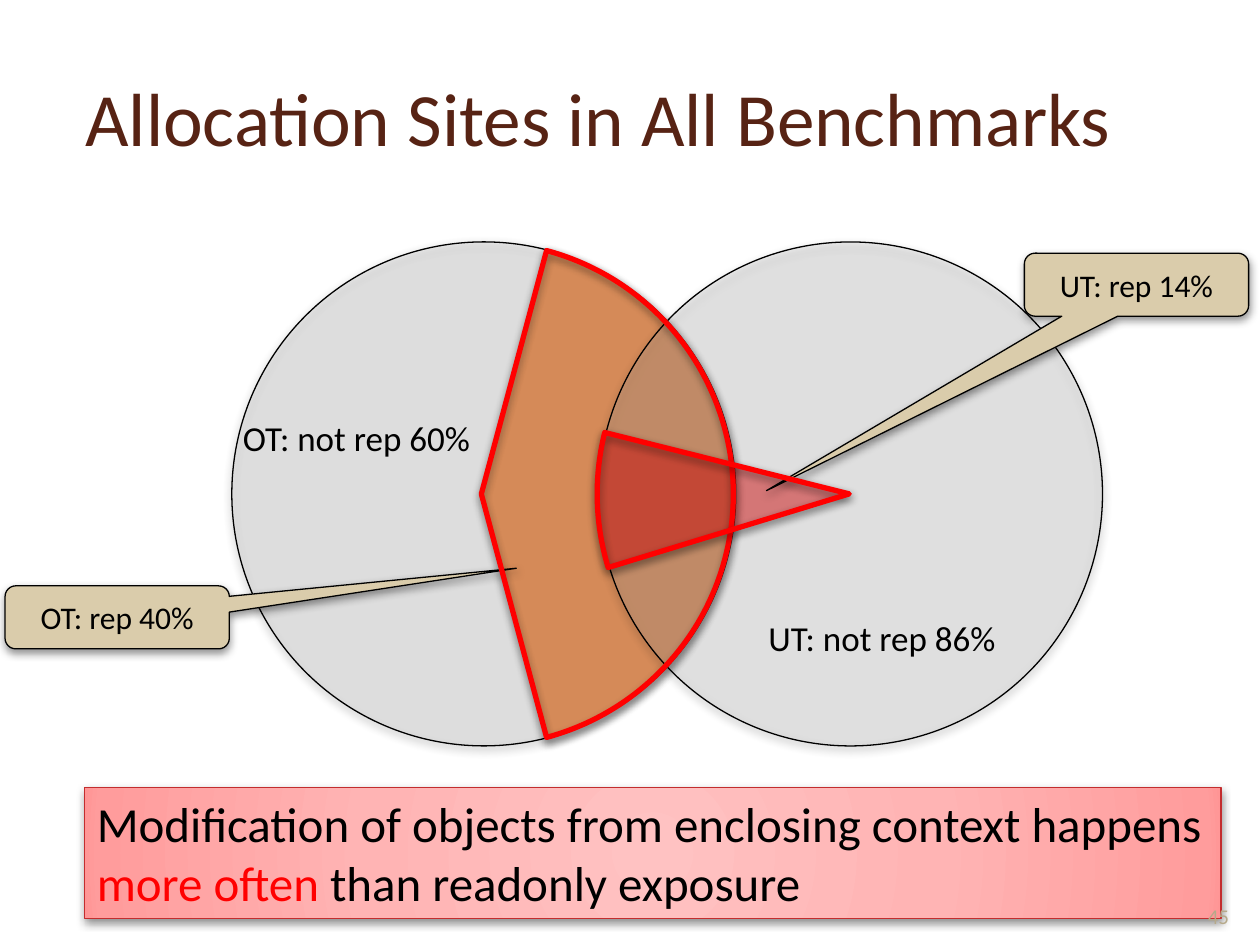
from lxml.etree import SubElement
from pptx import Presentation
from pptx.dml.color import RGBColor
from pptx.enum.shapes import MSO_SHAPE as Shape
from pptx.enum.text import MSO_ANCHOR as Anchor, PP_ALIGN as Align
from pptx.oxml import parse_xml
from pptx.oxml.ns import nsdecls, qn
from pptx.util import Emu, Pt

PX = 9144  # 100 px to the inch
BLACK = "000000"
SHADOW = f"""<a:effectLst {nsdecls("a")}>
<a:outerShdw blurRad="63500" dist="25400" dir="5400000" rotWithShape="0">
<a:srgbClr val="000000"><a:alpha val="43000"/></a:srgbClr>
</a:outerShdw></a:effectLst>"""

deck = Presentation()
deck.slide_width, deck.slide_height = Emu(1000 * PX), Emu(750 * PX)
slide = deck.slides.add_slide(deck.slide_layouts[6])


def draw(kind, box, fill=None, alpha=100, line=BLACK, width=0.75, turn=0, adj=()):
    """Add a shadowed preset shape; alpha is its opacity in percent."""
    shape = slide.shapes.add_shape(kind, *(Emu(n * PX) for n in box))
    shape.rotation = turn
    for i, value in enumerate(adj):
        shape.adjustments[i] = value
    if fill:
        shape.fill.solid()
        shape.fill.fore_color.rgb = RGBColor.from_string(fill)
        if alpha < 100:
            tint = shape.fill._xPr.find(qn("a:solidFill"))[0]
            SubElement(tint, qn("a:alpha"), val=str(alpha * 1000))
    else:
        shape.fill.background()
    shape.line.color.rgb = RGBColor.from_string(line)
    shape.line.width = Pt(width)
    shape._element.spPr.append(parse_xml(SHADOW))
    return shape


def write(shape, lines, size, **form):
    """Fill a shape with lines, each a list of (text, colour) runs."""
    frame = shape.text_frame
    look = {"word_wrap": True, "vertical_anchor": Anchor.TOP, "align": Align.LEFT} | form
    align = look.pop("align")
    for name, value in look.items():
        setattr(frame, name, value)
    for i, runs in enumerate(lines):
        para = frame.add_paragraph() if i else frame.paragraphs[0]
        para.alignment = align
        for text, color in runs:
            run = para.add_run()
            run.text = text
            run.font.name, run.font.size = "Calibri", Pt(size)
            run.font.color.rgb = RGBColor.from_string(color)


def label(box, text, size, color=BLACK, **form):
    area = slide.shapes.add_textbox(*(Emu(n * PX) for n in box))
    write(area, [[(text, color)]], size, **form)


label((58, 30, 887, 125), "Allocation Sites in All Benchmarks", 43, "572314",
      vertical_anchor=Anchor.MIDDLE)

# Circles with their sectors: left, sector left, opacity, turns, tint, opacity, angles
SETS = [
    (184, 183, 22, 0, 180, "FF6600", 49, (105, 255)),
    (475, 475, 21, 180, 0, "FF0000", 37, (163.2, 193.8)),
]
for left, part, clear, spin, turn, tint, alpha, angles in SETS:
    draw(Shape.OVAL, (left, 192, 400, 400), "BFBFBF", clear, turn=spin)
    draw(Shape.PIE, (part, 192, 400, 400), tint, alpha, "3891A7", turn=turn,
         adj=[a * 0.6 for a in angles])

CALLS = [
    ((4, 465, 178, 50), "OT: rep 40%", (1.78, -0.78, 0.17)),
    ((813, 201, 178, 50), "UT: rep 14%", (-1.65, 3.27, 0.17)),
]
for box, text, adj in CALLS:
    call = draw(Shape.ROUNDED_RECTANGULAR_CALLOUT, box, "DACCAB", adj=adj)
    write(call, [[(text, BLACK)]], 18, vertical_anchor=Anchor.MIDDLE, align=Align.CENTER)

label((183, 326, 208, 44), "OT: not rep 60%", 20, word_wrap=False)
label((600, 484, 207, 44), "UT: not rep 86%", 20, word_wrap=False)

# Conclusion on a round gradient
note = draw(Shape.RECTANGLE, (67, 625, 902, 104), line="C32D2E")
STOPS = [(0, "FFC2C2"), (50, "FFB4B4"), (97, "FF9C9C"), (100, "FF9595")]
stops = "".join(f'<a:gs pos="{pos * 1000}"><a:srgbClr val="{color}"/></a:gs>'
                for pos, color in STOPS)
blend = parse_xml(f"""<a:gradFill {nsdecls("a")} rotWithShape="1"><a:gsLst>{stops}</a:gsLst>
<a:path path="circle"><a:fillToRect l="50000" t="50000" r="50000" b="50000"/></a:path>
</a:gradFill>""")
props = note._element.spPr
props.replace(props.find(qn("a:noFill")), blend)
write(note, [
    [("Modification of objects from enclosing context happens", BLACK)],
    [("more often ", "FF0000"), ("than readonly exposure", BLACK)],
], 28, word_wrap=False)

# Red outlines round both sectors
for left, turn, angles in [(182, 180, (105, 255)), (474, 0, (163, 194.1))]:
    draw(Shape.PIE, (left, 192, 400, 400), line="FF0000", width=3, turn=turn,
         adj=[a * 0.6 for a in angles])

label((942, 690, 50, 52), "45", 12, "B6A98A", vertical_anchor=Anchor.BOTTOM,
      align=Align.CENTER)

deck.save("out.pptx")
